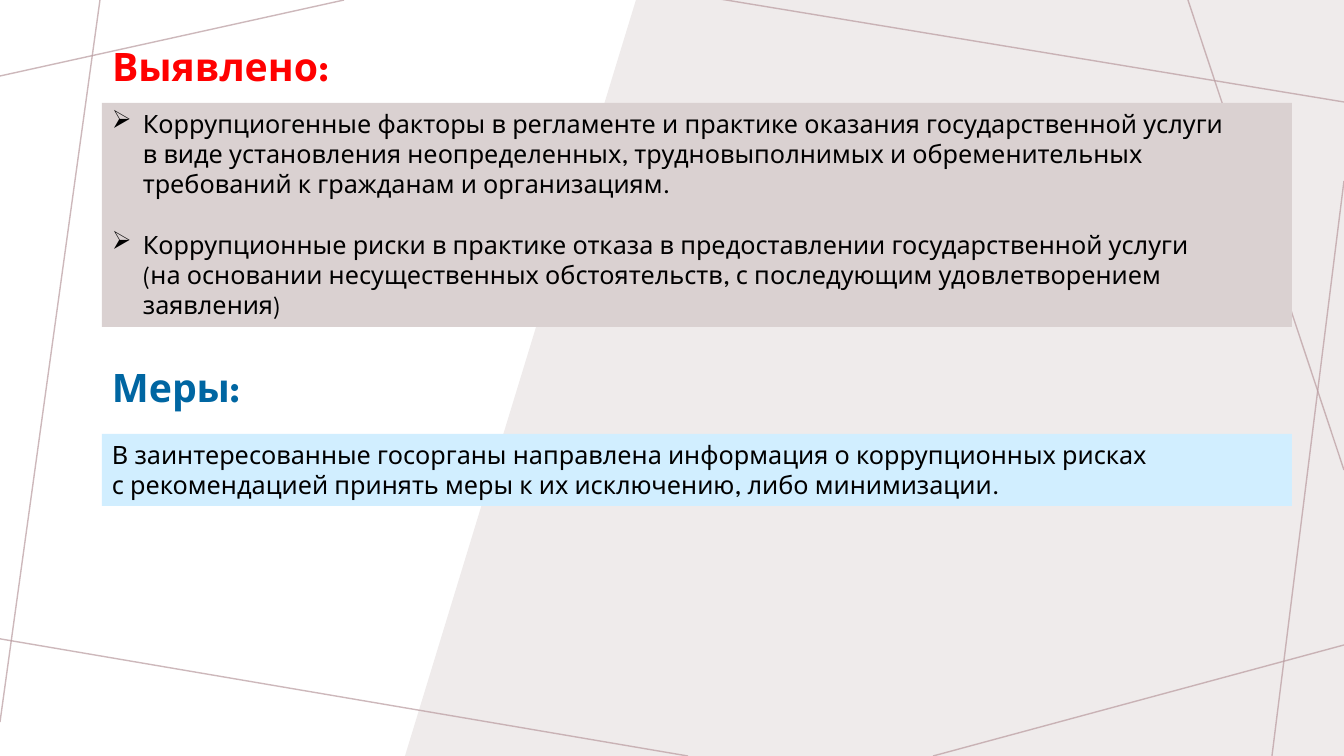
"""Build the slide on identified corruption risks and the measures taken."""
from lxml import etree
from pptx import Presentation
from pptx.dml.color import RGBColor
from pptx.enum.shapes import MSO_CONNECTOR, MSO_SHAPE
from pptx.enum.text import MSO_ANCHOR, MSO_AUTO_SIZE, PP_ALIGN
from pptx.oxml.ns import qn
from pptx.util import Emu, Pt

STRAIGHT = MSO_CONNECTOR.STRAIGHT
RECTANGLE = MSO_SHAPE.RECTANGLE
TOP = MSO_ANCHOR.TOP
LEFT = PP_ALIGN.LEFT
NO_FIT = MSO_AUTO_SIZE.NONE
PX = 914400 / 100.8
WIDTH, HEIGHT = 1344, 756
MARGIN, PANEL_WIDTH = 102, 1190
FONT = "League Spartan"


def set_color(target, color):
    target.rgb = RGBColor.from_string(color)


def write_text(box, text, size=18, color="000000", bold=False, bullet=None, gap=0):
    frame = box.text_frame
    frame.word_wrap = True
    frame.auto_size = NO_FIT
    frame.vertical_anchor = TOP
    for index, line in enumerate(text.split("\n")):
        para = frame.paragraphs[0] if index == 0 else frame.add_paragraph()
        para.text = line
        para.alignment = LEFT
        if index:
            para.space_before = Pt(gap)
        if bullet:
            properties = para._p.get_or_add_pPr()
            properties.set("marL", str(round(31 * PX)))
            properties.set("indent", str(round(-31 * PX)))
            etree.SubElement(properties, qn("a:buChar"), char=bullet)
        for span in para.runs:
            span.font.name = FONT
            span.font.size = Pt(size)
            span.font.bold = bold
            set_color(span.font.color, color)


deck = Presentation()
deck.slide_width = Emu(round(WIDTH * PX))
deck.slide_height = Emu(round(HEIGHT * PX))
page = deck.slides.add_slide(deck.slide_layouts[5])
shapes = page.shapes

builder = shapes.build_freeform(636, 0, scale=PX)
builder.add_line_segments([(WIDTH, 0), (WIDTH, HEIGHT), (405, HEIGHT)], close=True)
backdrop = builder.convert_to_shape()
backdrop.shadow.inherit = False
backdrop.fill.solid()
set_color(backdrop.fill.fore_color, "EFEBEB")
backdrop.line.fill.background()

rays = [
    (344, 0, 0, 76),
    (100, 0, 0, 722),
    (688, 756, -5, 638),
    (1344, 645, 933, 756),
    (1344, 181, 1272, 756),
    (1344, 470, 1188, 0),
    (1344, 102, 720, -1),
]
for ends in rays:
    ray = shapes.add_connector(STRAIGHT, *[Emu(round(end * PX)) for end in ends])
    ray.line.width = Pt(1)
    set_color(ray.line.color, "B99B9F")
    tint = ray._element.spPr.find(".//" + qn("a:srgbClr"))
    etree.SubElement(tint, qn("a:alpha"), val="70000")
    etree.SubElement(ray._element.spPr, qn("a:effectLst"))

findings = (
    "Коррупциогенные факторы в регламенте и практике оказания государственной услуги\v"
    "в виде установления неопределенных, трудновыполнимых и обременительных "
    "требований к гражданам и организациям.\n"
    "Коррупционные риски в практике отказа в предоставлении государственной услуги\v"
    "(на основании несущественных обстоятельств, с последующим удовлетворением заявления)"
)
measures = (
    "В заинтересованные госорганы направлена информация о коррупционных рисках\v"
    "с рекомендацией принять меры к их исключению, либо минимизации."
)
panels = [
    (103, 224, "DAD1D1", findings, "➢"),
    (434, 72, "D1EEFF", measures, None),
]
for top, height, fill, text, bullet in panels:
    area = [Emu(round(side * PX)) for side in (MARGIN, top, PANEL_WIDTH, height)]
    panel = shapes.add_shape(RECTANGLE, *area)
    panel.shadow.inherit = False
    panel.fill.solid()
    set_color(panel.fill.fore_color, fill)
    panel.line.fill.background()
    write_text(panel, text, bullet=bullet, gap=21.6)

title = shapes.title
title.left, title.top, title.width, title.height = [
    Emu(round(side * PX)) for side in (MARGIN, 37, 262, 58)
]
write_text(title, "Выявлено:", size=28, color="FF0000", bold=True)

area = [Emu(round(side * PX)) for side in (MARGIN, 358, 220, 58)]
heading = shapes.add_textbox(*area)
write_text(heading, "Меры:", size=28, color="0066A2", bold=True)

deck.save("out.pptx")
